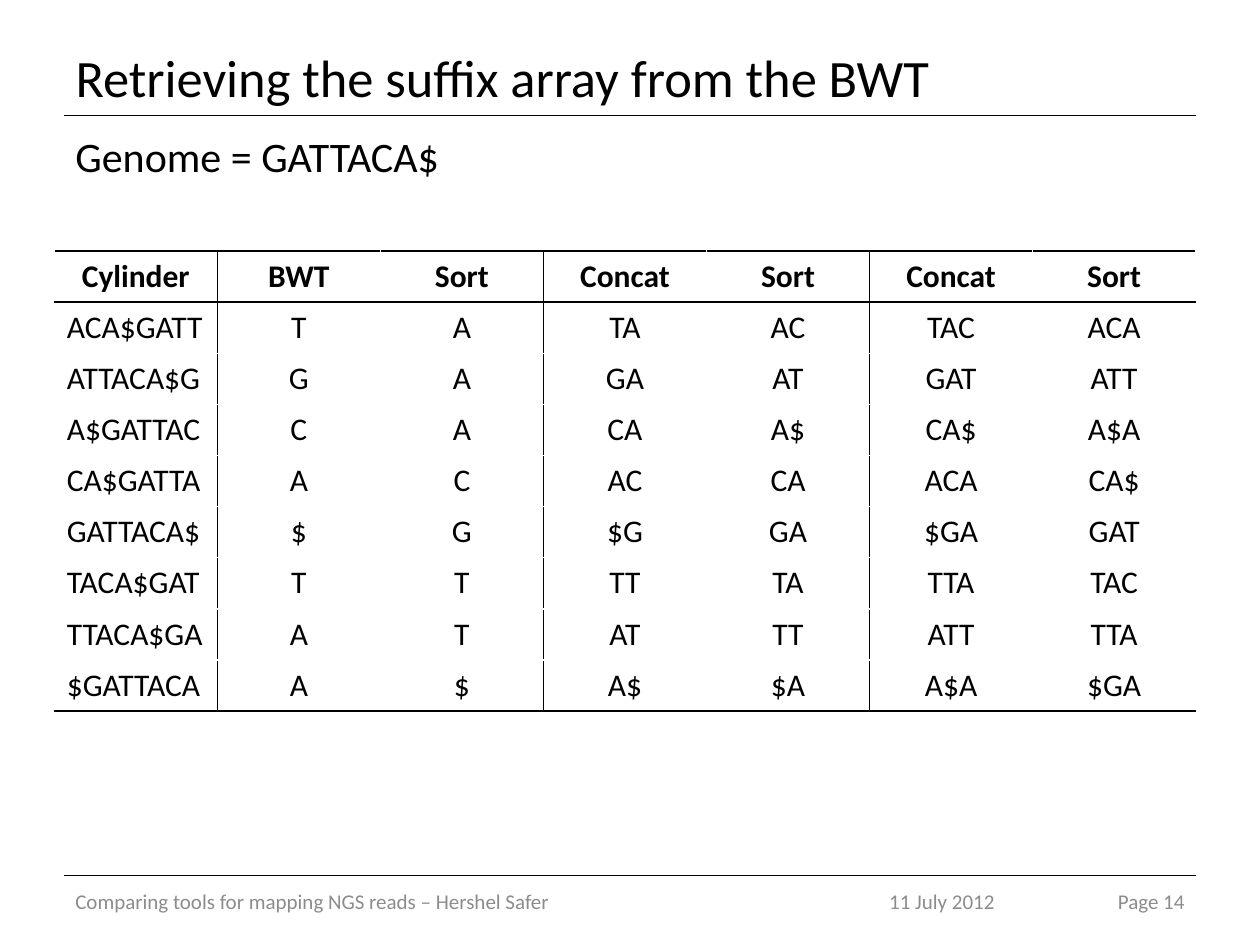
from dataclasses import dataclass

from lxml import etree
from pptx import Presentation
from pptx import util as u
from pptx.dml.color import RGBColor
from pptx.enum import shapes, text
from pptx.oxml.ns import qn

Pt = u.Pt
Align = text.PP_ALIGN
Anchor = text.MSO_ANCHOR


@dataclass(frozen=True)
class Theme:
    font: str = "Calibri"
    ink: str = "000000"
    pale: str = "FFFFFF"
    gray: str = "8C8C8C"
    title: int = 30
    body: int = 24
    cell: int = 18
    foot: int = 12
    rule: float = 0.75
    edge: float = 1


class Deck:
    def __init__(self, theme):
        self.theme = theme
        self.show = Presentation()
        self.show.slide_width, self.show.slide_height = Pt(720), Pt(540)
        self.slide = self.show.slides.add_slide(self.show.slide_layouts[5])

    def add_text(self, frame, words, size, color, align=Align.LEFT, bold=False):
        para = frame.paragraphs[0]
        para.alignment = align
        run = para.add_run()
        run.text = words
        font = run.font
        font.name, font.size, font.bold = self.theme.font, Pt(size), bold
        font.color.rgb = RGBColor.from_string(color)
        return para

    def title(self, words, left, top, width, height):
        shape = self.slide.shapes.title
        shape.left, shape.top = Pt(left), Pt(top)
        shape.width, shape.height = Pt(width), Pt(height)
        frame = shape.text_frame
        frame.auto_size = text.MSO_AUTO_SIZE.NONE
        frame.vertical_anchor = Anchor.MIDDLE
        self.add_text(frame, words, self.theme.title, self.theme.ink)

    def label(self, words, left, top, width, height, size, color,
              align=Align.LEFT, anchor=Anchor.MIDDLE):
        box = self.slide.shapes.add_textbox(
            Pt(left), Pt(top), Pt(width), Pt(height))
        frame = box.text_frame
        frame.word_wrap = True
        frame.vertical_anchor = anchor
        return self.add_text(frame, words, size, color, align)

    def rule(self, left, right, top):
        line = self.slide.shapes.add_connector(
            shapes.MSO_CONNECTOR.STRAIGHT, Pt(left), Pt(top), Pt(right), Pt(top))
        line.line.width = Pt(self.theme.rule)
        line.line.color.rgb = RGBColor.from_string(self.theme.ink)
        etree.SubElement(line._element.spPr, qn("a:effectLst"))

    def border(self, cell, dark):
        props = cell._tc.get_or_add_tcPr()
        for spot, side in enumerate("LRTB"):
            line = etree.Element(qn(f"a:ln{side}"), w=str(Pt(self.theme.edge)))
            fill = etree.SubElement(line, qn("a:solidFill"))
            color = self.theme.ink if side in dark else self.theme.pale
            etree.SubElement(fill, qn("a:srgbClr"), val=color)
            props.insert(spot, line)

    def table(self, rows, left, top, width, height, bars):
        count, wide = len(rows), len(rows[0])
        grid = self.slide.shapes.add_table(
            count, wide, Pt(left), Pt(top), Pt(width), Pt(height)).table
        grid.horz_banding = False
        for col in grid.columns:
            col.width = Pt(width / wide)
        for r, row in enumerate(rows):
            grid.rows[r].height = Pt(height / count)
            for c, words in enumerate(row):
                cell = grid.cell(r, c)
                cell.fill.background()
                align = Align.LEFT if r and not c else Align.CENTER
                self.add_text(cell.text_frame, words, self.theme.cell,
                              self.theme.ink, align, bold=r == 0)
                tests = {"L": c in bars, "R": c + 1 in bars,
                         "T": r < 2, "B": r in (0, count - 1)}
                self.border(cell, [side for side, on in tests.items() if on])


ROWS = """
Cylinder BWT Sort Concat Sort Concat Sort
ACA$GATT T A TA AC TAC ACA
ATTACA$G G A GA AT GAT ATT
A$GATTAC C A CA A$ CA$ A$A
CA$GATTA A C AC CA ACA CA$
GATTACA$ $ G $G GA $GA GAT
TACA$GAT T T TT TA TTA TAC
TTACA$GA A T AT TT ATT TTA
$GATTACA A $ A$ $A A$A $GA
"""


def main():
    theme = Theme()
    deck = Deck(theme)
    for top in (66, 500.5):
        deck.rule(36.75, 683.25, top)
    deck.title("Retrieving the suffix array from the BWT", 36, 21.75, 648, 44)
    para = deck.label("Genome = GATTACA$", 36, 71.25, 648, 425.5, theme.body,
                      theme.ink, Align.JUSTIFY, Anchor.TOP)
    para.space_after = Pt(12)
    rows = [line.split() for line in ROWS.strip().splitlines()]
    deck.table(rows, 31, 143.5, 652.4, 262.8, bars=(1, 3, 5))
    for words, left, width, align in (
        ("Comparing tools for mapping NGS reads – Hershel Safer", 36, 432, Align.LEFT),
        ("11 July 2012", 473, 130.5, Align.CENTER),
        ("Page 14", 609, 75, Align.RIGHT),
    ):
        deck.label(words, left, 500.5, width, 28.75, theme.foot, theme.gray, align)
    deck.show.save("out.pptx")


if __name__ == "__main__":
    main()
